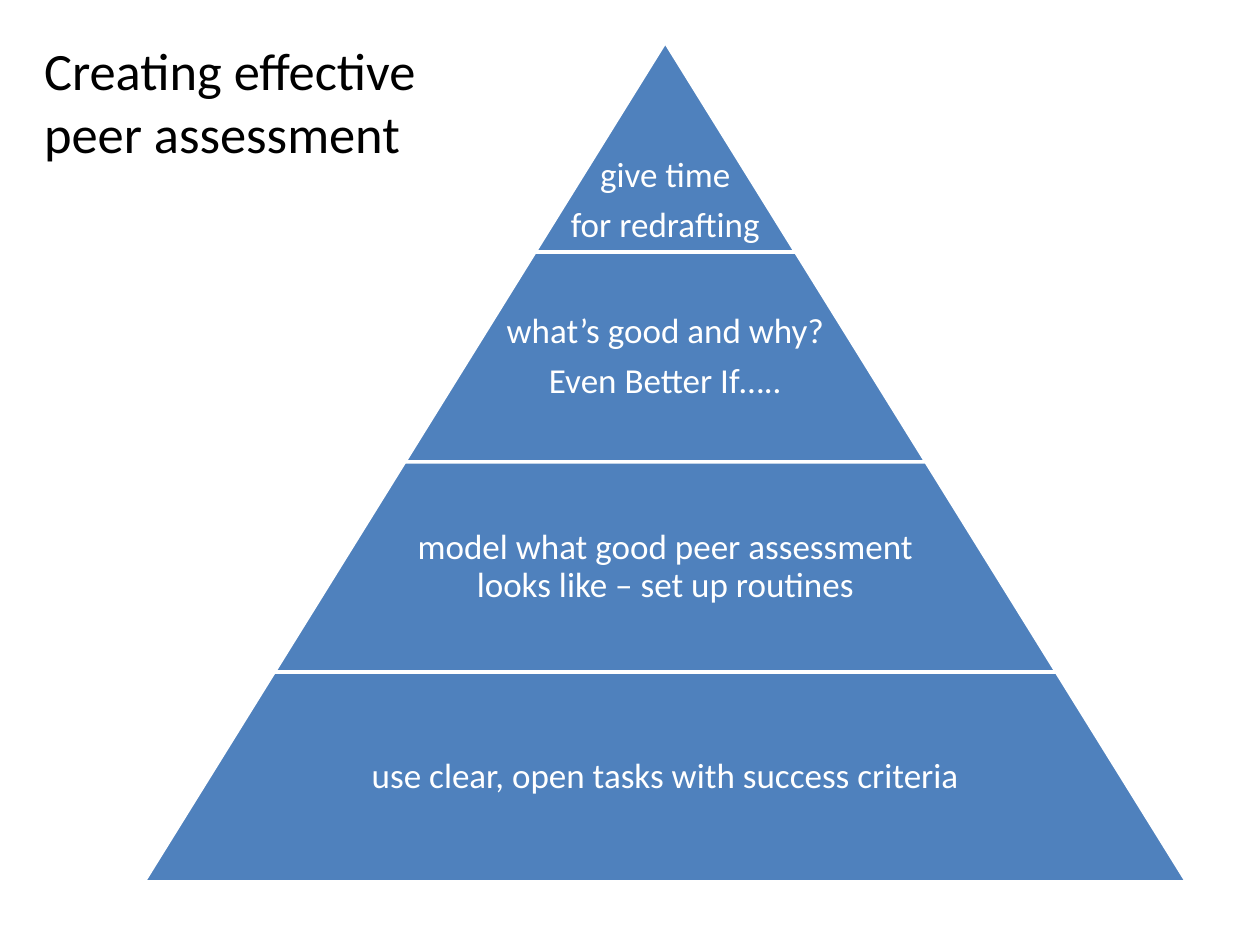
"""Builds a slide with a four-tier pyramid on effective peer assessment."""
from dataclasses import dataclass

from pptx import Presentation
from pptx.dml.color import RGBColor
from pptx.enum.shapes import MSO_SHAPE
from pptx.enum.text import MSO_ANCHOR, MSO_AUTO_SIZE, PP_ALIGN
from pptx.slide import Slide
from pptx.util import Pt

TRAPEZOID = MSO_SHAPE.TRAPEZOID
TOP, MIDDLE, BOTTOM = MSO_ANCHOR.TOP, MSO_ANCHOR.MIDDLE, MSO_ANCHOR.BOTTOM
LEFT, CENTER = PP_ALIGN.LEFT, PP_ALIGN.CENTER
NO_FIT = MSO_AUTO_SIZE.NONE
TITLE_ONLY = 5


@dataclass(frozen=True)
class Theme:
    font: str = "Calibri"
    title_size: float = 30
    tier_size: float = 20
    title_color: RGBColor = RGBColor(0x00, 0x00, 0x00)
    tier_fill: RGBColor = RGBColor(0x4F, 0x81, 0xBD)
    white: RGBColor = RGBColor(0xFF, 0xFF, 0xFF)


@dataclass(frozen=True)
class Pyramid:
    center: float = 380.2
    top: float = 24
    tier_height: float = 120
    width_step: float = 149


@dataclass(frozen=True)
class Tier:
    lines: tuple[str, ...]
    text_share: float = 0.65
    anchor: MSO_ANCHOR = MIDDLE


THEME = Theme()
PYRAMID = Pyramid()
TIERS = (
    Tier(("give time", "for redrafting"), text_share=1, anchor=BOTTOM),
    Tier(("what’s good and why?", "Even Better If…..")),
    Tier(("model what good peer assessment looks like – set up routines",)),
    Tier(("use clear, open tasks with success criteria",)),
)


def add_run(p, text: str, size: float, color: RGBColor) -> None:
    r = p.add_run()
    r.text = text
    r.font.name = THEME.font
    r.font.size = Pt(size)
    r.font.color.rgb = color


def add_title(s: Slide, text: str) -> None:
    sp = s.shapes.title
    sp.left, sp.top, sp.width, sp.height = Pt(18), Pt(18), Pt(258), Pt(80)
    tf = sp.text_frame
    tf.word_wrap = True
    tf.auto_size = NO_FIT
    tf.vertical_anchor = TOP
    p = tf.paragraphs[0]
    p.alignment = LEFT
    add_run(p, text, THEME.title_size, THEME.title_color)


def add_tier(s: Slide, tier: Tier, level: int) -> None:
    height = PYRAMID.tier_height
    width = PYRAMID.width_step * (level + 1)
    top = PYRAMID.top + height * level
    sp = s.shapes.add_shape(TRAPEZOID, Pt(PYRAMID.center - width / 2), Pt(top),
                            Pt(width), Pt(height))
    sp.adjustments[0] = PYRAMID.width_step / 2 / height
    sp.shadow.inherit = False
    sp.fill.solid()
    sp.fill.fore_color.rgb = THEME.tier_fill
    sp.line.color.rgb = THEME.white
    sp.line.width = Pt(2)
    add_tier_text(s, tier, top, width * tier.text_share)


def add_tier_text(s: Slide, tier: Tier, top: float, width: float) -> None:
    sp = s.shapes.add_textbox(Pt(PYRAMID.center - width / 2), Pt(top),
                              Pt(width), Pt(PYRAMID.tier_height))
    tf = sp.text_frame
    tf.word_wrap = True
    tf.auto_size = NO_FIT
    tf.vertical_anchor = tier.anchor
    tf.margin_left = tf.margin_right = Pt(2)
    tf.margin_top = tf.margin_bottom = Pt(4)
    for i, line in enumerate(tier.lines):
        p = tf.add_paragraph() if i else tf.paragraphs[0]
        p.alignment = CENTER
        p.line_spacing = 0.9
        p.space_before = Pt(7 if i else 0)
        add_run(p, line, THEME.tier_size, THEME.white)


def main() -> None:
    prs = Presentation()
    prs.slide_width, prs.slide_height = Pt(720), Pt(540)
    s = prs.slides.add_slide(prs.slide_layouts[TITLE_ONLY])
    add_title(s, "Creating effective peer assessment")
    for level, tier in enumerate(TIERS):
        add_tier(s, tier, level)
    prs.save("out.pptx")


if __name__ == "__main__":
    main()
